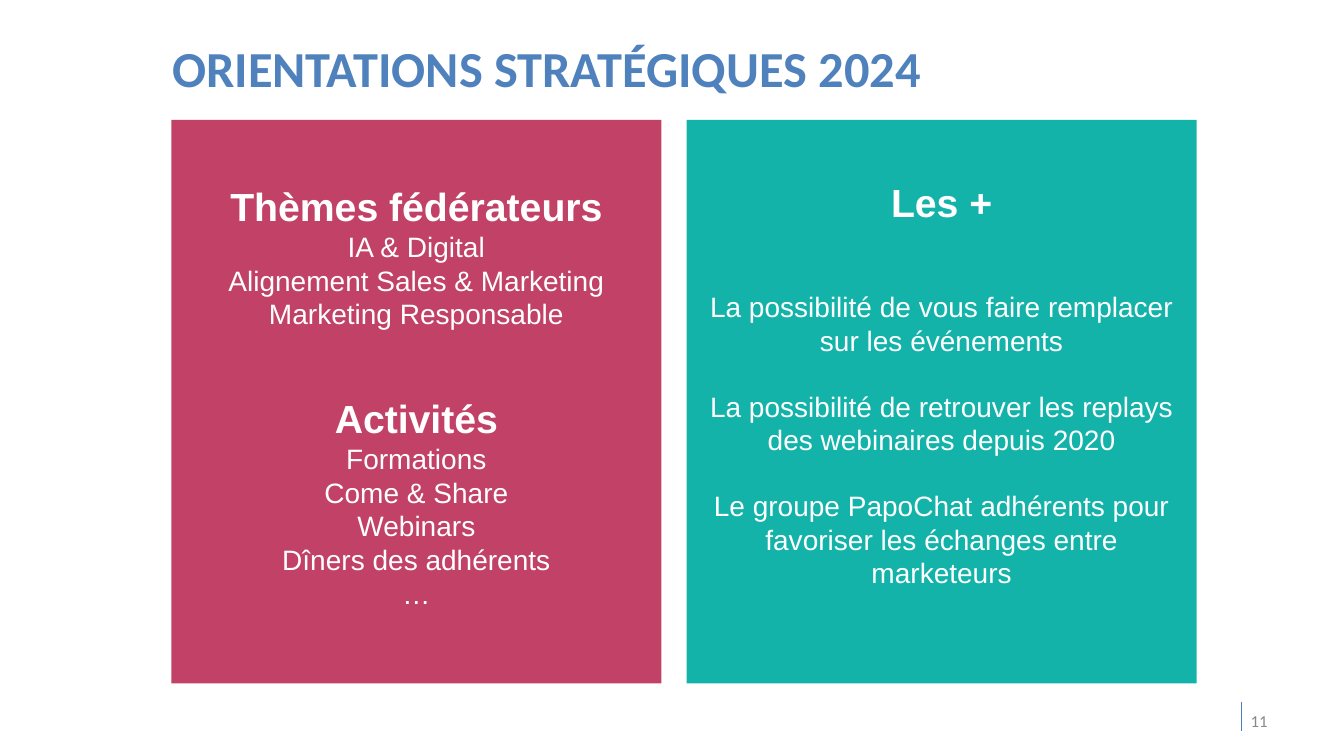
import pptx
import pptx.dml.color
import pptx.enum.shapes
import pptx.enum.text
import pptx.util
from lxml import etree

Inches, Pt = pptx.util.Inches, pptx.util.Pt
ALIGN, ANCHOR = pptx.enum.text.PP_ALIGN, pptx.enum.text.MSO_ANCHOR

BLANK_LINE = 23  # height in points of one 20 pt line


def color(value):
    return pptx.dml.color.RGBColor.from_string(value)


def add_text(p, text, font="Arial", size=20, fill="FFFFFF", bold=False,
             align=ALIGN.CENTER, before=0):
    p.alignment = align
    if before:
        p.space_before = Pt(before)
    r = p.add_run()
    r.text = text
    r.font.name, r.font.size, r.font.bold = font, Pt(size), bold
    r.font.color.rgb = color(fill)


class Deck:
    title_style = dict(font="Calibri", size=36, fill="4F81BD", bold=True, align=ALIGN.LEFT)
    number_style = dict(font="Calibri", size=12, fill="898989", align=ALIGN.RIGHT)
    heading_style = dict(size=28, bold=True)

    def __init__(self):
        self.prs = pptx.Presentation()
        self.prs.slide_width, self.prs.slide_height = Inches(13.33), Inches(7.5)
        self.slide = self.prs.slides.add_slide(self.prs.slide_layouts[6])

    def text(self, x, y, w, h, paragraphs, anchor=ANCHOR.TOP):
        """Add a text box; paragraphs is a list of (text, format) pairs."""
        sp = self.slide.shapes.add_textbox(Inches(x), Inches(y), Inches(w), Inches(h))
        tf = sp.text_frame
        tf.word_wrap = True
        tf.vertical_anchor = anchor
        for i, (text, style) in enumerate(paragraphs):
            p = tf.add_paragraph() if i else tf.paragraphs[0]
            add_text(p, text, **style)

    def panel(self, x, w, fill, text_top, paragraphs):
        """Add a coloured panel with its text on top."""
        sp = self.slide.shapes.add_shape(
            pptx.enum.shapes.MSO_SHAPE.RECTANGLE,
            Inches(x), Inches(1.19), Inches(w), Inches(5.59))
        sp.shadow.inherit = False
        sp.fill.solid()
        sp.fill.fore_color.rgb = color(fill)
        sp.line.fill.background()
        self.text(x, text_top, w, 5, paragraphs)

    def line(self, x1, y1, x2, y2, fill, width):
        cx = self.slide.shapes.add_connector(
            pptx.enum.shapes.MSO_CONNECTOR.STRAIGHT,
            Inches(x1), Inches(y1), Inches(x2), Inches(y2))
        cx.line.color.rgb = color(fill)
        cx.line.width = Pt(width)
        sppr = cx.line._get_or_add_ln().getparent()
        etree.SubElement(sppr, pptx.oxml.ns.qn("a:effectLst"))


def main():
    deck = Deck()
    heading = deck.heading_style
    deck.line(12.31, 6.96, 12.31, 7.25, "4A7DBA", 0.75)
    deck.text(9.56, 6.95, 3.11, 0.4, [("11", deck.number_style)], ANCHOR.MIDDLE)
    deck.text(1.61, 0.41, 11.52, 0.51,
              [("ORIENTATIONS STRATÉGIQUES 2024", deck.title_style)], ANCHOR.MIDDLE)

    themes = ["IA & Digital", "Alignement Sales & Marketing", "Marketing Responsable"]
    activities = ["Formations", "Come & Share", "Webinars", "Dîners des adhérents", "…"]
    deck.panel(1.7, 4.86, "C14266", 1.76, [
        ("Thèmes fédérateurs", heading),
        *[(theme, {}) for theme in themes],
        ("Activités", dict(heading, before=2 * BLANK_LINE)),
        *[(activity, {}) for activity in activities],
    ])

    benefits = [
        "La possibilité de vous faire remplacer sur les événements",
        "La possibilité de retrouver les replays des webinaires depuis 2020",
        "Le groupe PapoChat adhérents pour favoriser les échanges entre marketeurs",
    ]
    deck.panel(6.81, 5.06, "14B3AA", 1.72, [
        ("Les +", heading),
        *[(benefit, dict(before=BLANK_LINE if i else 2 * BLANK_LINE))
          for i, benefit in enumerate(benefits)],
    ])
    deck.prs.save("out.pptx")


if __name__ == "__main__":
    main()
